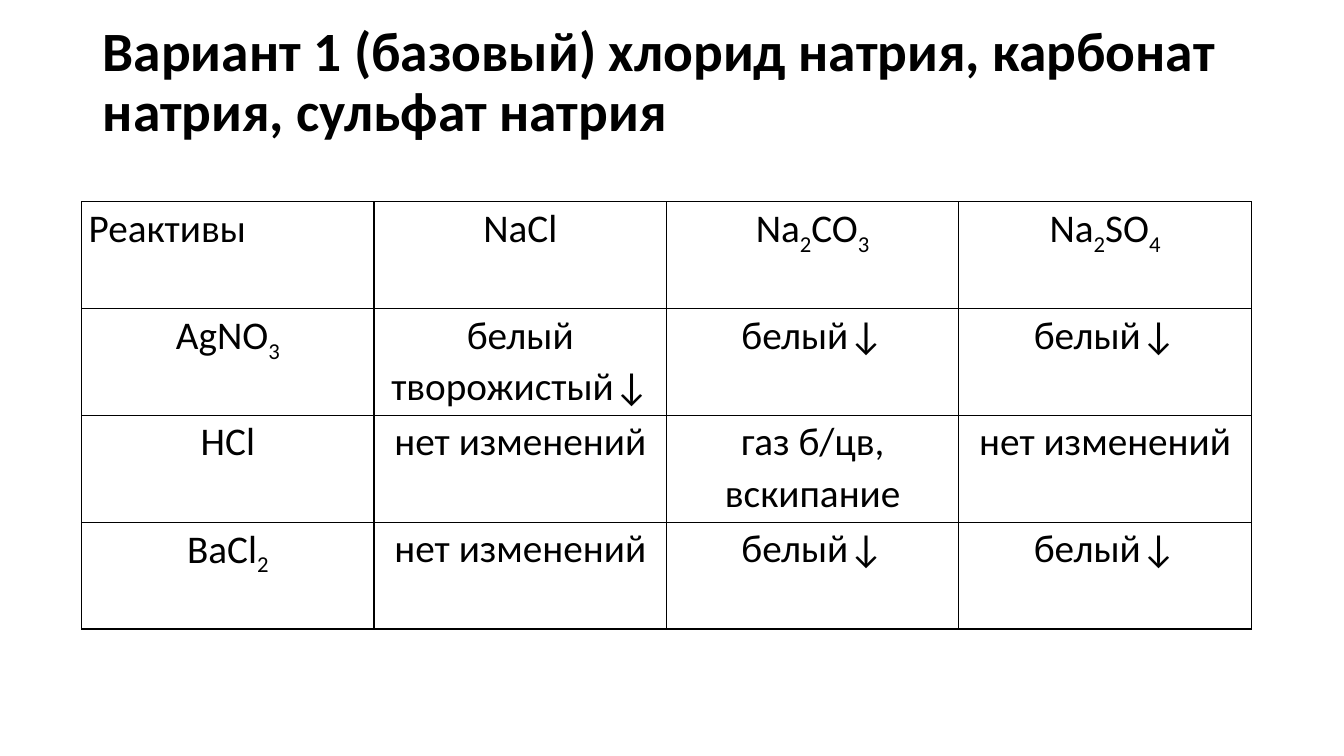
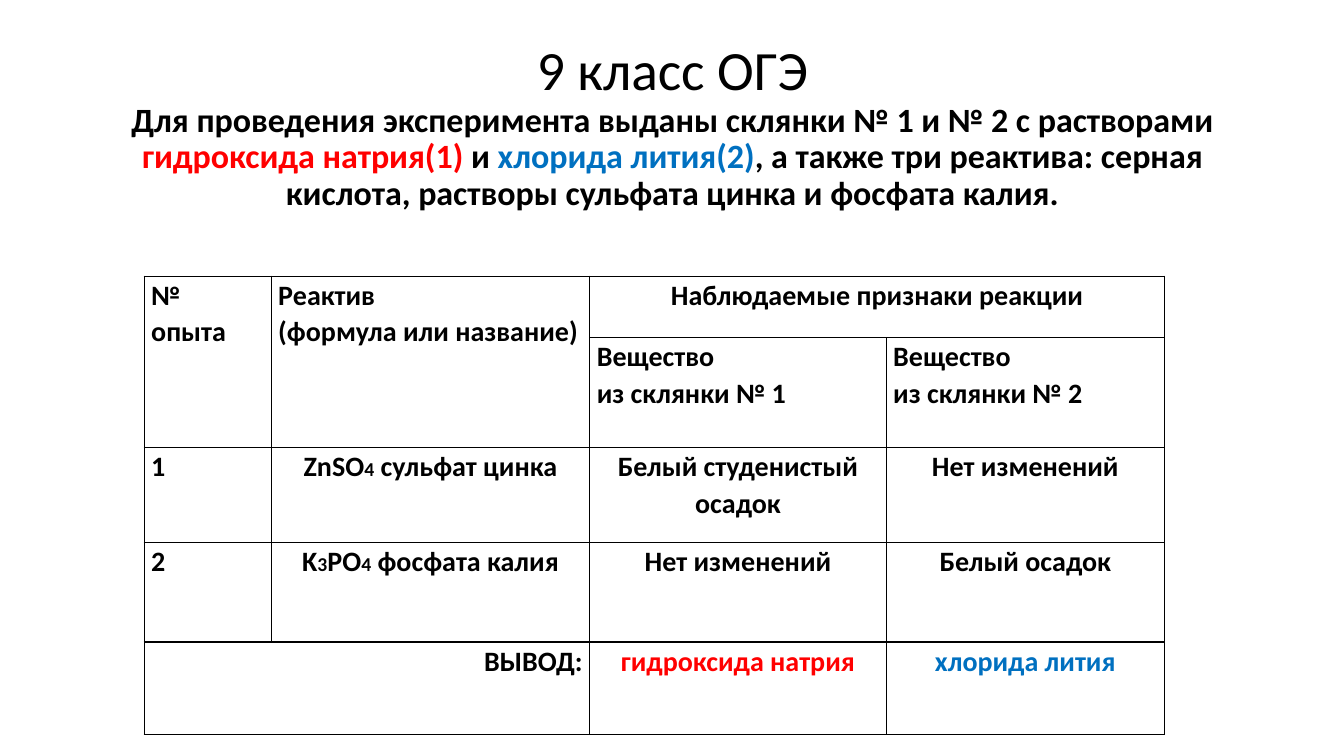
from dataclasses import dataclass

from lxml import etree
from pptx import Presentation
from pptx.dml.color import RGBColor
from pptx.enum import text
from pptx.oxml import ns
from pptx.util import Inches, Pt

LEFT, CENTER = text.PP_ALIGN.LEFT, text.PP_ALIGN.CENTER
RIGHT, JUSTIFY = text.PP_ALIGN.RIGHT, text.PP_ALIGN.JUSTIFY


@dataclass(frozen=True)
class Theme:
    font: str = "Calibri"
    black: str = "000000"
    red: str = "FF0000"
    blue: str = "0070C0"
    title_size: float = 39.6
    task_size: float = 24.3
    formula_size: float = 28
    report_size: float = 20
    report_digit_size: float = 14
    title_spacing: float = 0.9
    cell_spacing: float = 1.07
    border: float = 1


THEME = Theme()


@dataclass(frozen=True)
class Cell:
    """Lines are split at newlines; every second part between ~ marks is an index."""
    content: str
    align: text.PP_ALIGN = CENTER
    color: str = THEME.black


def format_paragraph(paragraph, size, bold, align, spacing, color=THEME.black):
    paragraph.alignment = align
    paragraph.line_spacing = spacing
    font = paragraph.font
    font.name, font.size, font.bold = THEME.font, Pt(size), bold
    font.color.rgb = RGBColor.from_string(color)


def add_title(slide, height, lines, align=LEFT):
    """Each line is (size, bold, runs); each run is (content, colour)."""
    title = slide.shapes.title
    title.left, title.top = Inches(0.92), Inches(0.4)
    title.width, title.height = Inches(11.5), Inches(height)
    frame = title.text_frame
    frame.word_wrap = True
    frame.auto_size = text.MSO_AUTO_SIZE.NONE
    frame.vertical_anchor = text.MSO_ANCHOR.MIDDLE
    frame.margin_bottom = Inches(0.65)
    for index, (size, bold, runs) in enumerate(lines):
        paragraph = frame.add_paragraph() if index else frame.paragraphs[0]
        format_paragraph(paragraph, size, bold, align, THEME.title_spacing)
        paragraph.space_before = Pt(0)
        for content, color in runs:
            run = paragraph.add_run()
            run.text = content
            if color != THEME.black:
                run.font.color.rgb = RGBColor.from_string(color)


def add_borders(cell):
    properties = cell._tc.get_or_add_tcPr()
    for side in ("a:lnL", "a:lnR", "a:lnT", "a:lnB"):
        line = etree.SubElement(properties, ns.qn(side), w=str(Pt(THEME.border)))
        fill = etree.SubElement(line, ns.qn("a:solidFill"))
        etree.SubElement(fill, ns.qn("a:srgbClr"), val=THEME.black)


def fill_cell(cell, entry, size, bold, index_size):
    frame = cell.text_frame
    for number, line in enumerate(entry.content.split("\n")):
        paragraph = frame.add_paragraph() if number else frame.paragraphs[0]
        format_paragraph(paragraph, size, bold, entry.align,
                         THEME.cell_spacing, entry.color)
        for position, part in enumerate(line.split("~")):
            if not part:
                continue
            run = paragraph.add_run()
            run.text = part
            if position % 2 and index_size:
                run.font.size = Pt(index_size)
            elif position % 2:
                run._r.get_or_add_rPr().set("baseline", "-25000")


def add_table(slide, left, top, widths, heights, rows, size,
              bold=False, index_size=None, merges=()):
    """Indices are subscripts unless index_size is given; None marks a covered cell."""
    table = slide.shapes.add_table(
        len(heights), len(widths), Inches(left), Inches(top),
        Inches(sum(widths)), Inches(sum(heights))).table
    table.first_row = table.horz_banding = False
    for column, width in zip(table.columns, widths):
        column.width = Inches(width)
    for row, height, entries in zip(table.rows, heights, rows):
        row.height = Inches(height)
        for cell, entry in zip(row.cells, entries):
            cell.margin_left = cell.margin_right = Inches(0.07)
            cell.margin_top = cell.margin_bottom = 0
            add_borders(cell)
            cell.fill.background()
            if entry:
                fill_cell(cell, entry, size, bold, index_size)
    for first, last in merges:
        table.cell(*first).merge(table.cell(*last))


def build_reagents(slide):
    heading = "Вариант 1 (базовый) хлорид натрия, карбонат натрия, сульфат натрия"
    add_title(slide, 1.45, [(THEME.title_size, True, [(heading, THEME.black)])])
    unchanged, white = Cell("нет изменений"), Cell("белый↓")
    rows = [
        [Cell("Реактивы", JUSTIFY), Cell("NaCl"), Cell("Na~2~CO~3"), Cell("Na~2~SO~4")],
        [Cell("AgNO~3"), Cell("белый творожистый↓"), white, white],
        [Cell("HCl"), unchanged, Cell("газ б/цв, вскипание"), unchanged],
        [Cell("BaCl~2"), unchanged, white, white],
    ]
    add_table(slide, 0.81, 2, [2.9] * 4, [1.06] * 4, rows, THEME.formula_size)


def build_experiment(slide):
    task = [
        ("Для проведения эксперимента выданы склянки № 1 и № 2 с растворами ", THEME.black),
        ("гидроксида натрия(1) ", THEME.red),
        ("и ", THEME.black),
        ("хлорида лития(2)", THEME.blue),
        (", а также три реактива: серная кислота, растворы сульфата цинка "
         "и фосфата калия.", THEME.black),
    ]
    add_title(slide, 2.34, [
        (THEME.title_size, False, [("9 класс ОГЭ", THEME.black)]),
        (THEME.task_size, True, task),
    ], CENTER)
    unchanged = Cell("Нет изменений")
    rows = [
        [Cell("№\nопыта", LEFT), Cell("Реактив\n(формула или название)", LEFT),
         Cell("Наблюдаемые признаки реакции"), None],
        [None, None, Cell("Вещество\nиз склянки № 1", LEFT),
         Cell("Вещество\nиз склянки № 2", LEFT)],
        [Cell("1", LEFT), Cell("ZnSO~4~ сульфат цинка"),
         Cell("Белый студенистый осадок"), unchanged],
        [Cell("2", LEFT), Cell("K~3~PO~4~ фосфата калия"),
         unchanged, Cell("Белый осадок")],
        [Cell("ВЫВОД:", RIGHT), None, Cell("гидроксида натрия", color=THEME.red),
         Cell("хлорида лития", color=THEME.blue)],
    ]
    add_table(slide, 1.43, 2.74, [1.26, 3.16, 2.94, 2.76],
              [0.61, 1.09, 0.94, 0.99, 0.92], rows, THEME.report_size,
              bold=True, index_size=THEME.report_digit_size,
              merges=[((0, 0), (1, 0)), ((0, 1), (1, 1)),
                      ((0, 2), (0, 3)), ((4, 0), (4, 1))])


def main():
    presentation = Presentation()
    presentation.slide_width, presentation.slide_height = Inches(13.33), Inches(7.5)
    title_only = presentation.slide_layouts.get_by_name("Title Only")
    for build in (build_reagents, build_experiment):
        build(presentation.slides.add_slide(title_only))
    presentation.save("out.pptx")


if __name__ == "__main__":
    main()
